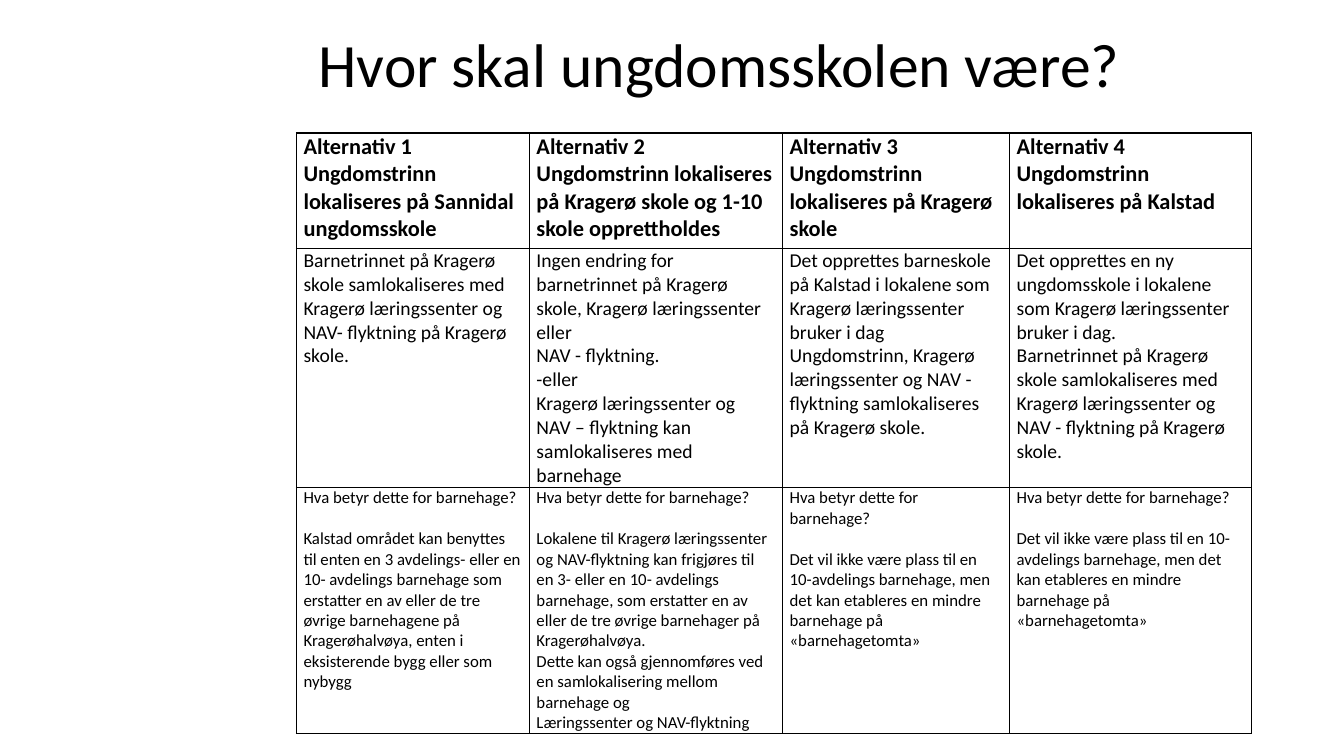
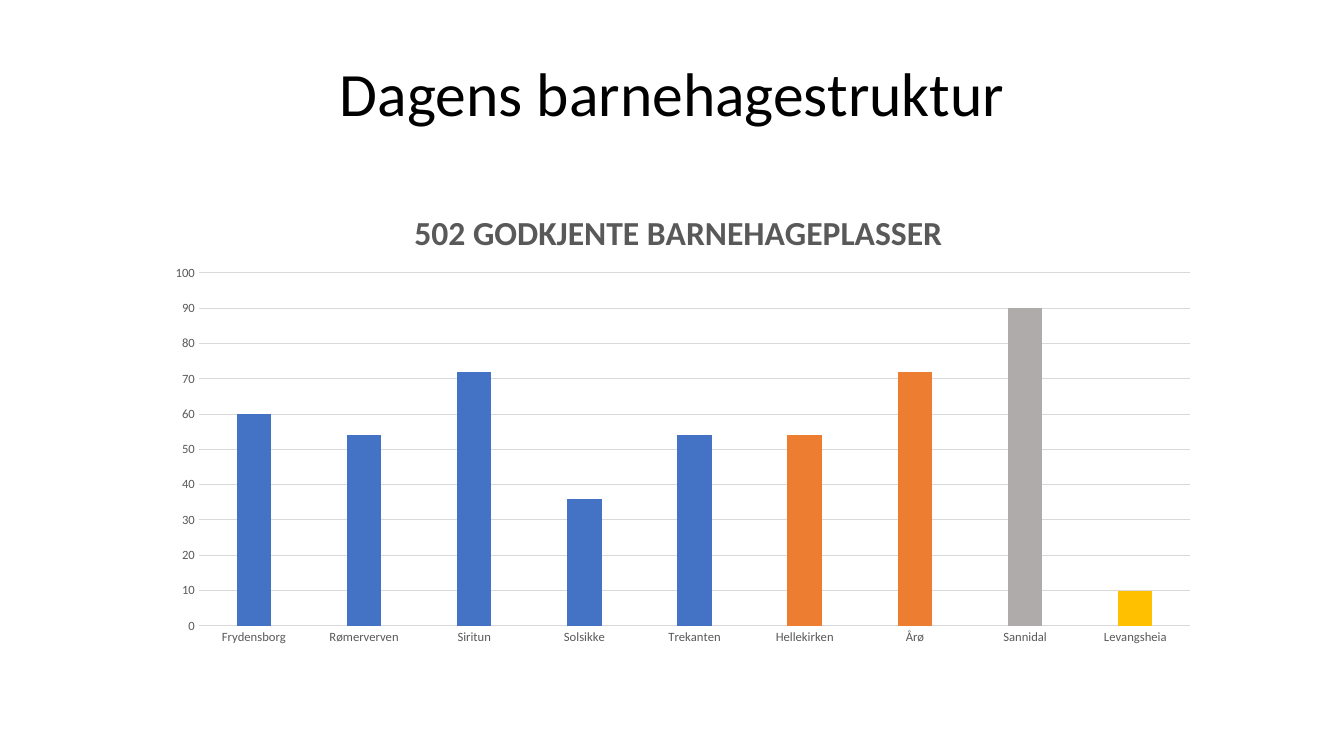
from dataclasses import dataclass
from itertools import chain

from lxml.etree import SubElement
from pptx import Presentation
from pptx.chart.data import CategoryChartData
from pptx.dml.color import RGBColor
from pptx.enum.chart import XL_CHART_TYPE as ChartType, XL_TICK_MARK as Tick
from pptx.enum.text import MSO_ANCHOR as Anchor, MSO_AUTO_SIZE as AutoSize, PP_ALIGN as Align
from pptx.oxml import parse_xml
from pptx.oxml.ns import nsdecls, qn
from pptx.util import Cm, Pt

FONT = "Calibri"
COLORS = {
    "text": "000000",
    "border": "000000",
    "muted": "595959",
    "grid": "D9D9D9",
    "blue": "4472C4",
    "orange": "ED7D31",
    "gray": "AFABAB",
    "yellow": "FFC000",
}
QUESTION = "Hva betyr dette for barnehage?"
SMALL_PLOT = ("Det vil ikke være plass til en 10-avdelings barnehage, men det kan "
              "etableres en mindre barnehage på «barnehagetomta»")


@dataclass(frozen=True)
class Box:
    left: float
    top: float
    width: float
    height: float

    def lengths(self) -> tuple:
        return Cm(self.left), Cm(self.top), Cm(self.width), Cm(self.height)


@dataclass(frozen=True)
class Alternative:
    width: float
    heading: str
    changes: tuple[str, ...]
    kindergarten: tuple[str, ...]


@dataclass(frozen=True)
class RowStyle:
    height: float
    size: int
    bold: bool = False
    first_gap: float = 0


@dataclass(frozen=True)
class Kindergarten:
    name: str
    places: int
    color: str


ROWS = (RowStyle(2.92, 16, bold=True), RowStyle(6.02, 14), RowStyle(6.17, 12, first_gap=14.6))

ALTERNATIVES = (
    Alternative(
        5.87,
        "Ungdomstrinn lokaliseres på Sannidal ungdomsskole",
        ("Barnetrinnet på Kragerø skole samlokaliseres med Kragerø læringssenter "
         "og NAV- flyktning på Kragerø skole.",),
        ("Kalstad området kan benyttes til enten en 3 avdelings- eller en 10- avdelings "
         "barnehage som erstatter en av eller de tre øvrige barnehagene på "
         "Kragerøhalvøya, enten i eksisterende bygg eller som nybygg",),
    ),
    Alternative(
        6.38,
        "Ungdomstrinn lokaliseres på Kragerø skole og 1-10 skole opprettholdes",
        ("Ingen endring for barnetrinnet på Kragerø skole, Kragerø læringssenter eller",
         "NAV - flyktning.",
         "-eller",
         "Kragerø læringssenter og",
         "NAV – flyktning kan samlokaliseres med barnehage"),
        ("Lokalene til Kragerø læringssenter og NAV-flyktning kan frigjøres til en 3- eller "
         "en 10- avdelings barnehage, som erstatter en av eller de tre øvrige barnehager "
         "på Kragerøhalvøya.",
         "Dette kan også gjennomføres ved en samlokalisering mellom barnehage og",
         "Læringssenter og NAV-flyktning"),
    ),
    Alternative(
        5.72,
        "Ungdomstrinn lokaliseres på Kragerø skole",
        ("Det opprettes barneskole på Kalstad i lokalene som Kragerø læringssenter "
         "bruker i dag",
         "Ungdomstrinn, Kragerø læringssenter og NAV - flyktning samlokaliseres på "
         "Kragerø skole."),
        (SMALL_PLOT,),
    ),
    Alternative(
        6.1,
        "Ungdomstrinn lokaliseres på Kalstad",
        ("Det opprettes en ny ungdomsskole i lokalene som Kragerø læringssenter "
         "bruker i dag.",
         "Barnetrinnet på Kragerø skole samlokaliseres med Kragerø læringssenter og "
         "NAV - flyktning på Kragerø skole."),
        (SMALL_PLOT,),
    ),
)

KINDERGARTENS = (
    Kindergarten("Frydensborg", 60, "blue"),
    Kindergarten("Rømerverven", 54, "blue"),
    Kindergarten("Siritun", 72, "blue"),
    Kindergarten("Solsikke", 36, "blue"),
    Kindergarten("Trekanten", 54, "blue"),
    Kindergarten("Hellekirken", 54, "orange"),
    Kindergarten("Årø", 72, "orange"),
    Kindergarten("Sannidal", 90, "gray"),
    Kindergarten("Levangsheia", 10, "yellow"),
)


def rgb(name: str) -> RGBColor:
    return RGBColor.from_string(COLORS[name])


def style_font(font, size: float, color: str = "text", bold: bool = False) -> None:
    font.name = FONT
    font.size = Pt(size)
    font.bold = bold
    font.color.rgb = rgb(color)


def add_run(p, text: str, size: float, color: str = "text", bold: bool = False) -> None:
    r = p.add_run()
    r.text = text
    style_font(r.font, size, color, bold)


def add_titled_slide(prs, title: str, box: Box, align: Align):
    s = prs.slides.add_slide(prs.slide_layouts[5])
    sp = s.shapes.title
    sp.left, sp.top, sp.width, sp.height = box.lengths()
    tf = sp.text_frame
    tf.word_wrap = True
    tf.auto_size = AutoSize.NONE
    tf.vertical_anchor = Anchor.MIDDLE
    p = tf.paragraphs[0]
    p.alignment = align
    p.line_spacing = 0.9
    add_run(p, title, 44)
    return s


def add_borders(cell) -> None:
    tc_pr = cell._tc.get_or_add_tcPr()
    for i, side in enumerate("LRTB"):
        tc_pr.insert(i, parse_xml(
            f'<a:ln{side} {nsdecls("a")} w="{Pt(1)}"><a:solidFill>'
            f'<a:srgbClr val="{COLORS["border"]}"/></a:solidFill></a:ln{side}>'))


def fill_cell(cell, lines: tuple[str, ...], style: RowStyle) -> None:
    cell.fill.background()
    cell.margin_left = cell.margin_right = Cm(0.18)
    cell.margin_top = cell.margin_bottom = Cm(0)
    add_borders(cell)
    tf = cell.text_frame
    for i, line in enumerate(lines):
        p = tf.add_paragraph() if i else tf.paragraphs[0]
        if i == 0 and style.first_gap:
            p.space_after = Pt(style.first_gap)
        add_run(p, line, style.size, bold=style.bold)


def add_alternatives_table(s) -> None:
    box = Box(7.47, 3.35, sum(a.width for a in ALTERNATIVES), sum(r.height for r in ROWS))
    table = s.shapes.add_table(len(ROWS), len(ALTERNATIVES), *box.lengths()).table
    table.first_row = table.horz_banding = False
    for row, style in zip(table.rows, ROWS):
        row.height = Cm(style.height)
    for col, alt in enumerate(ALTERNATIVES):
        table.columns[col].width = Cm(alt.width)
        texts = (
            (f"Alternativ {col + 1}", alt.heading),
            alt.changes,
            tuple(chain((QUESTION,), alt.kindergarten)),
        )
        for row, (lines, style) in enumerate(zip(texts, ROWS)):
            fill_cell(table.cell(row, col), lines, style)


def place_in_chart(parent, index: int, **values) -> None:
    layout = parent.find(qn("c:layout"))
    if layout is None:
        layout = parse_xml(f'<c:layout {nsdecls("c")}/>')
        parent.insert(index, layout)
    manual = SubElement(layout, qn("c:manualLayout"))
    for tag, value in values.items():
        SubElement(manual, qn(f"c:{tag}")).set("val", str(value))


def style_axis(axis) -> None:
    axis.major_tick_mark = axis.minor_tick_mark = Tick.NONE
    style_font(axis.tick_labels.font, 9, "muted")


def style_line(line) -> None:
    line.color.rgb = rgb("grid")
    line.width = Pt(0.75)


def add_places_chart(s) -> None:
    data = CategoryChartData()
    data.categories = [k.name for k in KINDERGARTENS]
    data.add_series("Plasser", [k.places for k in KINDERGARTENS])
    box = Box(3.89, 4.55, 26.67, 11.94)
    chart = s.shapes.add_chart(ChartType.COLUMN_CLUSTERED, *box.lengths(), data).chart
    style_font(chart.font, 10)
    chart.has_legend = False
    chart.has_title = True
    title = chart.chart_title
    add_run(title.text_frame.paragraphs[0], "502 GODKJENTE BARNEHAGEPLASSER", 24, "muted", True)
    place_in_chart(title._element, 1, xMode="edge", yMode="edge", x=0.24, y=0.05)

    plot = chart.plots[0]
    plot.gap_width, plot.overlap = 219, -27
    plot.vary_by_categories = False
    place_in_chart(plot._element.getparent(), 0, layoutTarget="inner", xMode="edge",
                   yMode="edge", x=0.042, y=0.195, w=0.937, h=0.745)
    series = plot.series[0]
    series.format.fill.solid()
    series.format.fill.fore_color.rgb = rgb("blue")
    for i, k in enumerate(KINDERGARTENS):
        if k.color != "blue":
            fill = series.points[i].format.fill
            fill.solid()
            fill.fore_color.rgb = rgb(k.color)

    style_axis(chart.category_axis)
    style_line(chart.category_axis.format.line)
    values = chart.value_axis
    style_axis(values)
    values.minimum_scale, values.maximum_scale, values.major_unit = 0, 100, 10
    values.format.line.fill.background()
    values.has_major_gridlines = True
    style_line(values.major_gridlines.format.line)


def main() -> None:
    prs = Presentation()
    prs.slide_width, prs.slide_height = Cm(33.87), Cm(19.05)
    s = add_titled_slide(prs, "Hvor skal ungdomsskolen være?",
                         Box(7.77, 0.2, 23.77, 3.02), Align.LEFT)
    add_alternatives_table(s)
    s = add_titled_slide(prs, "Dagens barnehagestruktur",
                         Box(2.34, 0.86, 29.21, 3.15), Align.CENTER)
    add_places_chart(s)
    prs.save("out.pptx")


if __name__ == "__main__":
    main()
